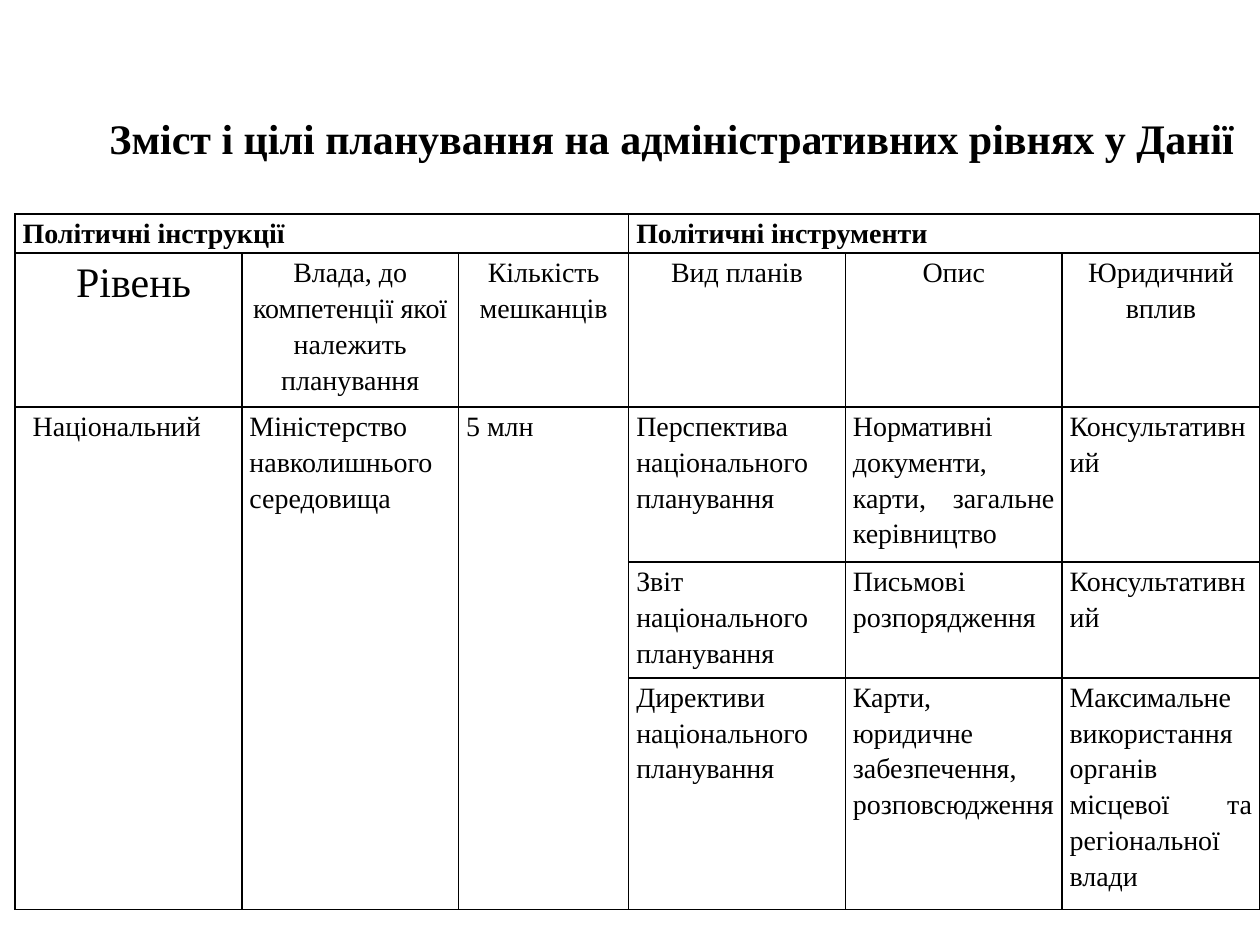
import pptx
import pptx.util
import pptx.dml.color
import pptx.enum.text
import pptx.oxml
import pptx.oxml.ns
from pptx.util import Inches

TITLE = "Зміст і цілі планування на адміністративних рівнях у Данії"
ROWS = [
    ["Політичні інструкції", None, None, "Політичні інструменти", None, None],
    ["Рівень", "Влада, до компетенції якої належить планування",
     "Кількість мешканців", "Вид планів", "Опис", "Юридичний вплив"],
    ["Національний", "Міністерство навколишнього середовища", "5 млн",
     "Перспектива національного планування",
     "Нормативні документи, карти, загальне керівництво", "Консультативний"],
    [None, None, None, "Звіт національного планування",
     "Письмові розпорядження", "Консультативний"],
    [None, None, None, "Директиви національного планування",
     "Карти, юридичне забезпечення, розповсюдження",
     "Максимальне використання органів місцевої та регіональної влади"],
]
MERGES = [((0, 0), (0, 2)), ((0, 3), (0, 5))] + [((2, c), (4, c)) for c in range(3)]
COLUMN_WIDTHS = [1.8, 1.72, 1.35, 1.72, 1.72, 1.57]
ROW_HEIGHTS = [0.31, 1.22, 1.23, 0.92, 1.84]
COLORS = {"ink": "000000"}
FONT = "Times New Roman"
ALIGN = pptx.enum.text.PP_ALIGN


def write(paragraph, text, size, bold, align, left=0, first_line=0):
    paragraph.alignment = align
    properties = paragraph._p.get_or_add_pPr()
    properties.set("marL", str(Inches(left)))
    properties.set("indent", str(Inches(first_line)))
    run = paragraph.add_run()
    run.text = text
    run.font.name = FONT
    run.font.size = pptx.util.Pt(size)
    run.font.bold = bold
    run.font.color.rgb = pptx.dml.color.RGBColor.from_string(COLORS["ink"])


def add_borders(cell):
    properties = cell._tc.get_or_add_tcPr()
    for position, side in enumerate(("lnL", "lnR", "lnT", "lnB")):
        properties.insert(position, pptx.oxml.parse_xml(
            f'<a:{side} {pptx.oxml.ns.nsdecls("a")} w="{pptx.util.Pt(1)}"><a:solidFill>'
            f'<a:srgbClr val="{COLORS["ink"]}"/></a:solidFill></a:{side}>'))


def add_levels(slide):
    levels = slide.shapes.add_table(
        len(ROWS), len(COLUMN_WIDTHS), Inches(0.12), Inches(1.7),
        Inches(sum(COLUMN_WIDTHS)), Inches(sum(ROW_HEIGHTS))).table
    levels.first_row = levels.horz_banding = False
    for column, width in zip(levels.columns, COLUMN_WIDTHS):
        column.width = Inches(width)
    for row, height in zip(levels.rows, ROW_HEIGHTS):
        row.height = Inches(height)
    for start, end in MERGES:
        levels.cell(*start).merge(levels.cell(*end))
    for r, row in enumerate(ROWS):
        for c, text in enumerate(row):
            cell = levels.cell(r, c)
            cell.fill.background()
            add_borders(cell)
            cell.margin_left = cell.margin_right = Inches(0.06)
            cell.margin_top = cell.margin_bottom = 0
            if text is None:
                continue
            paragraph = cell.text_frame.paragraphs[0]
            paragraph.line_spacing = 1.15
            write(paragraph, text,
                  size=24 if (r, c) == (1, 0) else 16,
                  bold=r == 0,
                  align=ALIGN.CENTER if r == 1 else ALIGN.JUSTIFY,
                  left=0.08 if r > 0 and c == 0 else 0)


def add_title(slide):
    title = slide.shapes.add_textbox(
        Inches(0.28), Inches(0.84), Inches(9.72), Inches(0.5)).text_frame
    title.word_wrap = True
    title.vertical_anchor = pptx.enum.text.MSO_ANCHOR.MIDDLE
    write(title.paragraphs[0], TITLE, 24, True, ALIGN.JUSTIFY, first_line=0.49)


def main():
    deck = pptx.Presentation()
    deck.slide_width, deck.slide_height = Inches(10), Inches(7.5)
    slide = deck.slides.add_slide(deck.slide_layouts[6])
    add_levels(slide)
    add_title(slide)
    deck.save("out.pptx")


if __name__ == "__main__":
    main()
